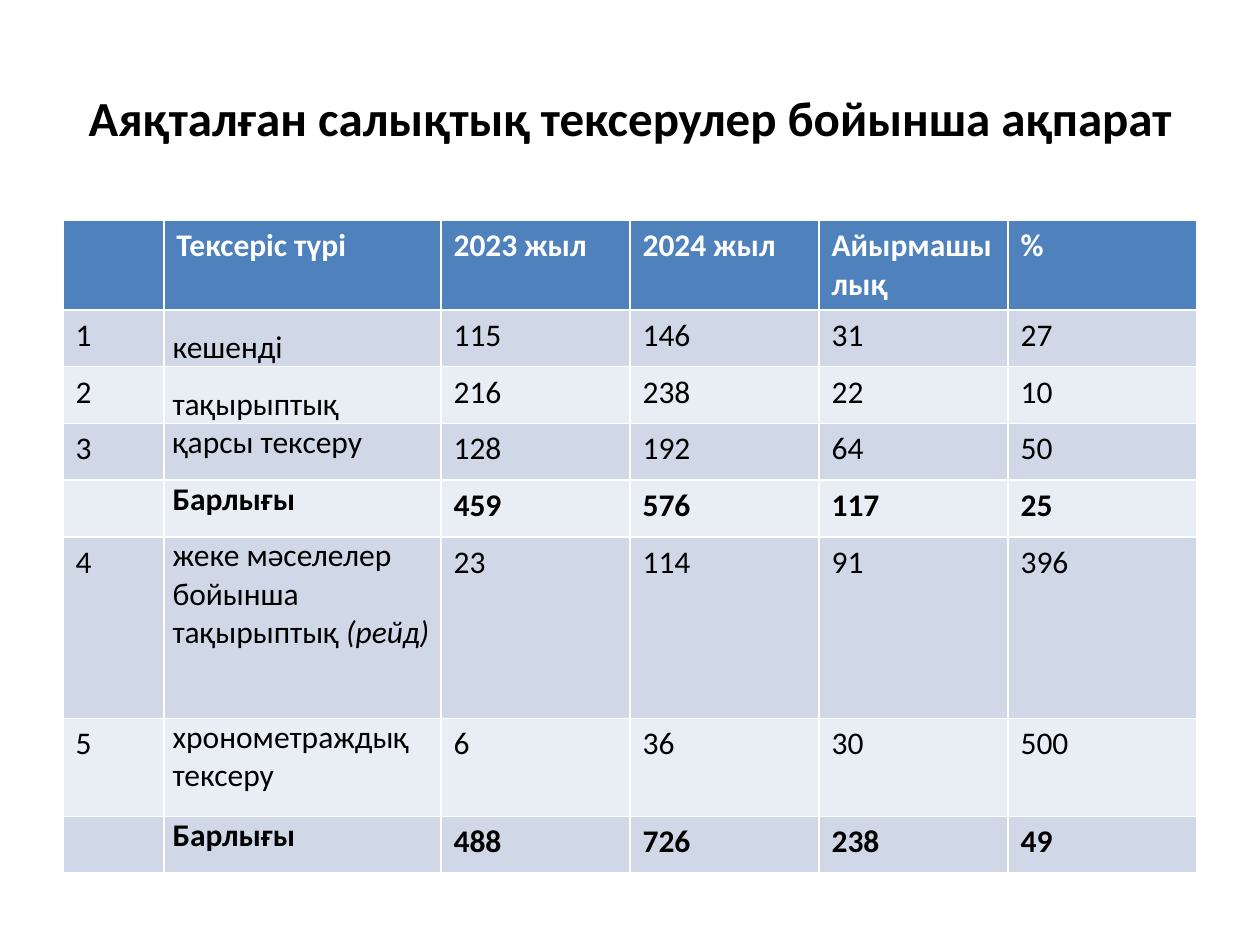
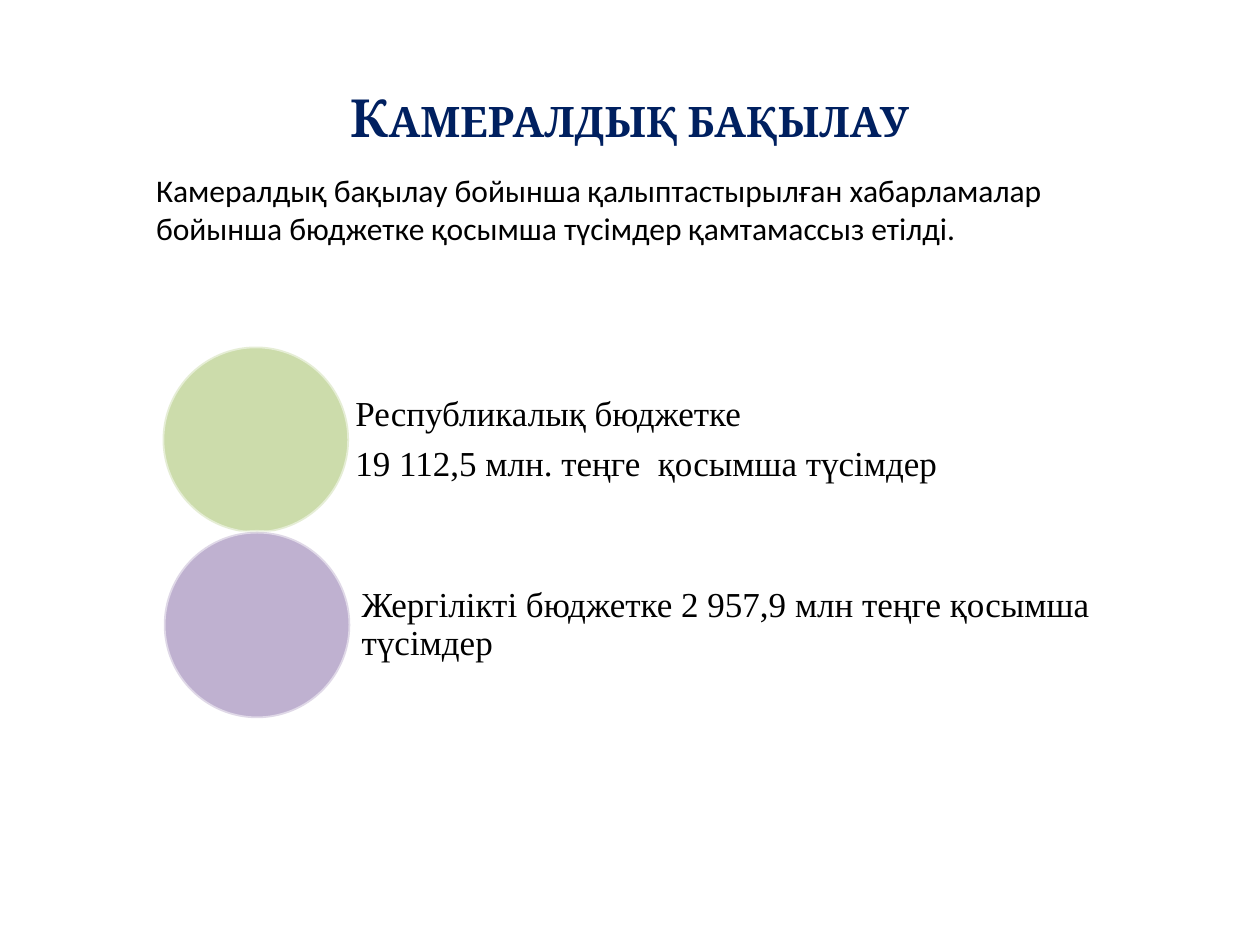
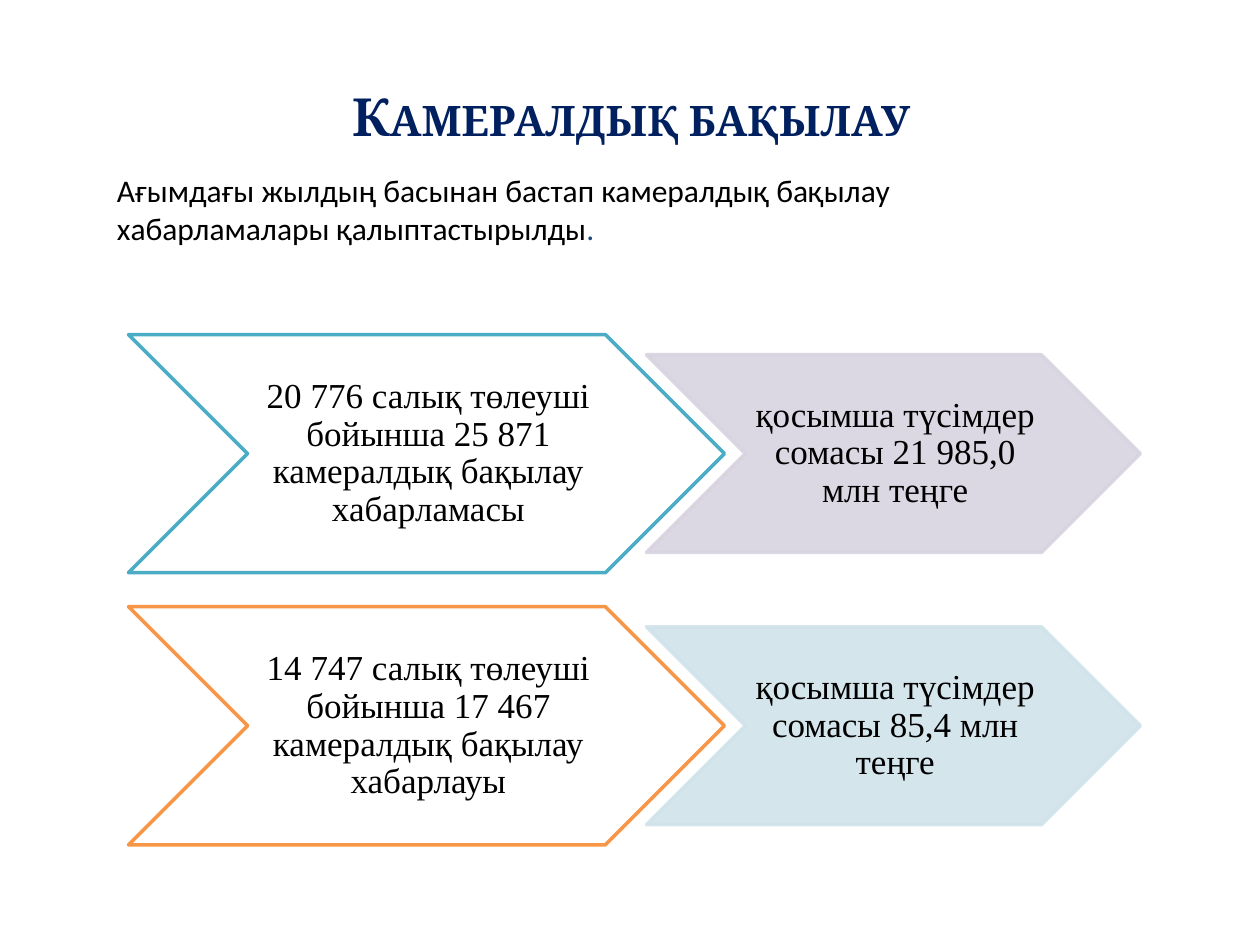
"""Build three slides on tax audits and desk control."""
from pptx import Presentation
from pptx.dml.color import RGBColor
from pptx.enum.shapes import MSO_SHAPE as Shape
from pptx.enum.text import MSO_ANCHOR as Anchor, PP_ALIGN as Align
from pptx.oxml.ns import qn
from pptx.util import Inches, Pt
from lxml.etree import SubElement

HUES = {
    "black": "000000", "white": "FFFFFF", "navy": "002060", "ink": "1F497D",
    "head": "4F81BD", "dark": "D0D8E8", "light": "E9EDF4",
    "green": "9BBB59", "plum": "8064A2", "teal": "4BACC6",
    "gold": "F79646", "lilac": "D8D3E0", "sky": "D0E3EA",
}
SERIF = "Times New Roman"

AUDITS = "Аяқталған салықтық тексерулер бойынша ақпарат"
CONTROL = "Камералдық бақылау"
COLS = [0.8, 2.2, 1.5, 1.5, 1.5, 1.5]
HEIGHTS = [0.45, 0.45, 0.45, 0.45, 0.45, 1.44, 0.78, 0.45]
TOTAL = "Барлығы"
ROWS = [
    ("", "Тексеріс түрі", "2023 жыл", "2024 жыл", "Айырмашылық", "%"),
    ("1", "кешенді", "115", "146", "31", "27"),
    ("2", "тақырыптық", "216", "238", "22", "10"),
    ("3", "қарсы тексеру", "128", "192", "64", "50"),
    ("", TOTAL, "459", "576", "117", "25"),
    ("4", [("жеке мәселелер бойынша тақырыптық ", {}), ("(рейд)", {"italic": True})],
     "23", "114", "91", "396"),
    ("5", "хронометраждық тексеру", "6", "36", "30", "500"),
    ("", TOTAL, "488", "726", "238", "49"),
]
LOW = (1, 2)

INCOME = ("Камералдық бақылау бойынша қалыптастырылған хабарламалар "
          "бойынша бюджетке қосымша түсімдер қамтамассыз етілді.")
FUNDS = [
    (1.29, 2.75, 2.82, 6.28, "green",
     ["Республикалық бюджетке", "19 112,5 млн. теңге  қосымша түсімдер"]),
    (1.3, 4.22, 2.87, 6.21, "plum",
     ["Жергілікті бюджетке 2 957,9 млн теңге қосымша түсімдер"]),
]
DISC = 1.48

NOTICE = [("Ағымдағы жылдың басынан бастап камералдық бақылау "
           "хабарламалары қалыптастырылды", {}), (".", {"hue": "ink"})]
FLOWS = [
    ("teal", "20 776 салық төлеуші бойынша 25 871 камералдық бақылау хабарламасы",
     "lilac", "қосымша түсімдер сомасы 21 985,0 млн теңге"),
    ("gold", "14 747 салық төлеуші бойынша 17 467 камералдық бақылау хабарлауы",
     "sky", "қосымша түсімдер сомасы 85,4 млн теңге"),
]


def color(name):
    return RGBColor.from_string(HUES[name])


def write(frame, *paras, size=18, font="Calibri", hue="black", bold=False,
          caps=False, align=None, anchor=None, pad=None, line=None, after=None):
    """Fill a text frame; a paragraph is a string or a list of styled runs."""
    frame.word_wrap = True
    if anchor is not None:
        frame.vertical_anchor = anchor
    if pad:
        (frame.margin_left, frame.margin_top,
         frame.margin_right, frame.margin_bottom) = map(Inches, pad)
    for i, text in enumerate(paras):
        para = frame.add_paragraph() if i else frame.paragraphs[0]
        if align is not None:
            para.alignment = align
        if line:
            para.line_spacing = line
        if after:
            para.space_after = Pt(after)
        for part, style in [(text, {})] if isinstance(text, str) else text:
            run = para.add_run()
            run.text = part
            run.font.size, run.font.name = Pt(size), font
            run.font.bold = bold
            run.font.italic = style.get("italic", False)
            run.font.color.rgb = color(style.get("hue", hue))
            if caps:
                run.font._element.set("cap", "small")


def label(slide, box, *paras, **style):
    write(slide.shapes.add_textbox(*map(Inches, box)).text_frame, *paras, **style)


def fade(fill, alpha):
    for tone in fill._xPr.iter(qn("a:srgbClr")):
        SubElement(tone, qn("a:alpha")).set("val", str(alpha * 1000))


def draw(slide, kind, box, fill, edge, alpha=100):
    shape = slide.shapes.add_shape(kind, *map(Inches, box))
    shape.shadow.inherit = False
    shape.fill.solid()
    shape.fill.fore_color.rgb = color(fill)
    shape.line.color.rgb = color(edge)
    shape.line.width = Pt(2)
    if alpha < 100:
        fade(shape.fill, alpha)


def start(deck, text, left=0.5, top=0.3, **style):
    slide = deck.slides.add_slide(deck.slide_layouts[5])
    title = slide.shapes.title
    title.left, title.top, title.width, title.height = map(Inches, (left, top, 9, 1.25))
    write(title.text_frame, text, bold=True, align=Align.CENTER,
          anchor=Anchor.MIDDLE, **style)
    return slide


def audits(deck):
    slide = start(deck, AUDITS, size=28)
    box = map(Inches, (0.5, 1.75, sum(COLS), sum(HEIGHTS)))
    table = slide.shapes.add_table(len(ROWS), len(COLS), *box).table
    for col, width in zip(table.columns, COLS):
        col.width = Inches(width)
    for r, row in enumerate(ROWS):
        table.rows[r].height = Inches(HEIGHTS[r])
        for c, text in enumerate(row):
            cell = table.cell(r, c)
            cell.fill.solid()
            cell.fill.fore_color.rgb = color(("light", "dark")[r % 2] if r else "head")
            if r and c == 1:
                cell.margin_left = cell.margin_right = Inches(0.07)
                cell.margin_top = cell.margin_bottom = 0
                if r in LOW:
                    cell.vertical_anchor = Anchor.BOTTOM
            if text:
                write(cell.text_frame, text, bold=not r or row[1] == TOTAL,
                      hue="black" if r else "white")


def budgets(deck):
    slide = start(deck, CONTROL, size=30, font="Cambria", hue="navy", caps=True)
    label(slide, (1.14, 1.31, 8.19, 0.71), INCOME)
    for left, top, side, width, hue, lines in FUNDS:
        draw(slide, Shape.OVAL, (left, top, DISC, DISC), hue, "white", 50)
        label(slide, (side, top, width, DISC), *lines, size=20, font=SERIF,
              anchor=Anchor.MIDDLE, pad=(0, 0.03, 0, 0.03), line=0.9, after=7)


def arrow(slide, left, mid, width, height, text, fill, edge, alpha=100):
    top = mid - height / 2
    draw(slide, Shape.CHEVRON, (left, top, width, height), fill, edge, alpha)
    label(slide, (left + height / 2, top, width - height, height), text,
          size=20, font=SERIF, align=Align.CENTER, anchor=Anchor.MIDDLE,
          pad=(0.03, 0.01, 0, 0.01), line=0.9, after=7)


def notices(deck):
    slide = start(deck, CONTROL, 0.51, 0.29, size=30, font="Cambria",
                  hue="navy", caps=True)
    for i, (edge, cause, fill, gain) in enumerate(FLOWS):
        mid = 3.6 + i * 2.16
        arrow(slide, 1.02, mid, 4.73, 1.89, cause, "white", edge)
        arrow(slide, 5.13, mid, 3.92, 1.57, gain, fill, fill, 90)
    label(slide, (0.83, 1.31, 7.87, 0.71), NOTICE)


def main():
    deck = Presentation()
    deck.slide_width, deck.slide_height = Inches(10), Inches(7.5)
    for build in (audits, budgets, notices):
        build(deck)
    deck.save("out.pptx")


if __name__ == "__main__":
    main()
